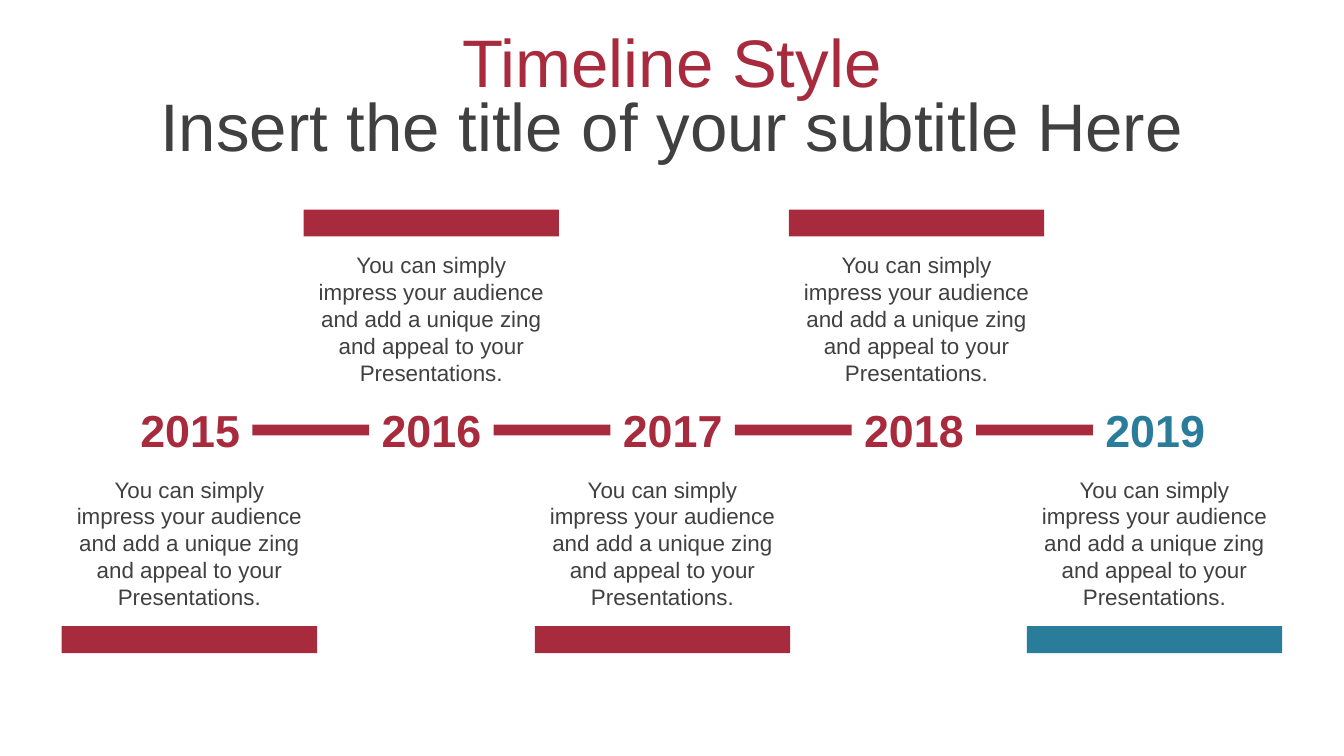
from pptx import Presentation
from pptx.dml.color import RGBColor
from pptx.enum.shapes import MSO_SHAPE
from pptx.enum.text import MSO_ANCHOR, PP_ALIGN
from pptx.util import Inches, Pt

RED = RGBColor(0xA8, 0x2B, 0x3D)
BLUE = RGBColor(0x29, 0x7D, 0x9B)
GRAY = RGBColor(0x40, 0x40, 0x40)
RECT = MSO_SHAPE.RECTANGLE
CENTER = PP_ALIGN.CENTER
TOP, MIDDLE = MSO_ANCHOR.TOP, MSO_ANCHOR.MIDDLE

SLIDE_W = 10
SLIDE_H = SLIDE_W * 9 / 16
CAPTION = ("You can simply impress your audience and add a unique zing "
           "and appeal to your Presentations.")
# year, left edge of its caption, caption above the line, colour
MILESTONES = [
    ("2015", 0.46, False, RED),
    ("2016", 2.26, True, RED),
    ("2017", 3.98, False, RED),
    ("2018", 5.87, True, RED),
    ("2019", 7.64, False, BLUE),
]


def add_text(s, x, y, w, h, text, size, color, bold=False, anchor=TOP):
    tf = s.shapes.add_textbox(Inches(x), Inches(y), Inches(w), Inches(h)).text_frame
    tf.word_wrap = True
    tf.vertical_anchor = anchor
    p = tf.paragraphs[0]
    p.text = text
    p.alignment = CENTER
    p.font.name = "Arial"
    p.font.size = Pt(size)
    p.font.bold = bold
    p.font.color.rgb = color


def add_bar(s, x, y, w, h, color):
    sp = s.shapes.add_shape(RECT, Inches(x), Inches(y), Inches(w), Inches(h))
    sp.shadow.inherit = False
    sp.fill.solid()
    sp.fill.fore_color.rgb = color
    sp.line.fill.background()


def add_heading(s, x, y, w):
    add_text(s, x, y, w, 0.63, "Timeline Style", 36, RED, anchor=MIDDLE)
    add_text(s, x, y + 0.63, w, 0.31, "Insert the title of your subtitle Here",
             36, GRAY, anchor=MIDDLE)


def add_year_line(s, x, y, w):
    """Evenly spaced years with a bar in each gap between them."""
    year_w, bar_w = 1.01, 0.87
    pitch = (w - year_w) / (len(MILESTONES) - 1)
    for i, (year, _, _, color) in enumerate(MILESTONES):
        left = x + i * pitch
        add_text(s, left, y, year_w, 0.5, year, 24, color, bold=True)
        if i < len(MILESTONES) - 1:
            add_bar(s, left + (year_w + pitch - bar_w) / 2, y + 0.21, bar_w, 0.08, RED)


def add_caption(s, x, y, w, above, color):
    """Caption with its bar on the side away from the year line."""
    text_y, bar_y = (y + 0.26, y) if above else (y, y + 1.17)
    add_text(s, x, text_y, w, 1.11, CAPTION, 12, GRAY)
    add_bar(s, x, bar_y, w, 0.2, color)


def main():
    prs = Presentation()
    prs.slide_width, prs.slide_height = Inches(SLIDE_W), Inches(SLIDE_H)
    s = prs.slides.add_slide(prs.slide_layouts[6])
    add_heading(s, 0, 0.14, SLIDE_W)
    add_year_line(s, 0.91, 2.95, 8.19)
    for _, x, above, color in MILESTONES:
        add_caption(s, x, 1.56 if above else 3.49, 1.9, above, color)
    prs.save("out.pptx")


if __name__ == "__main__":
    main()
